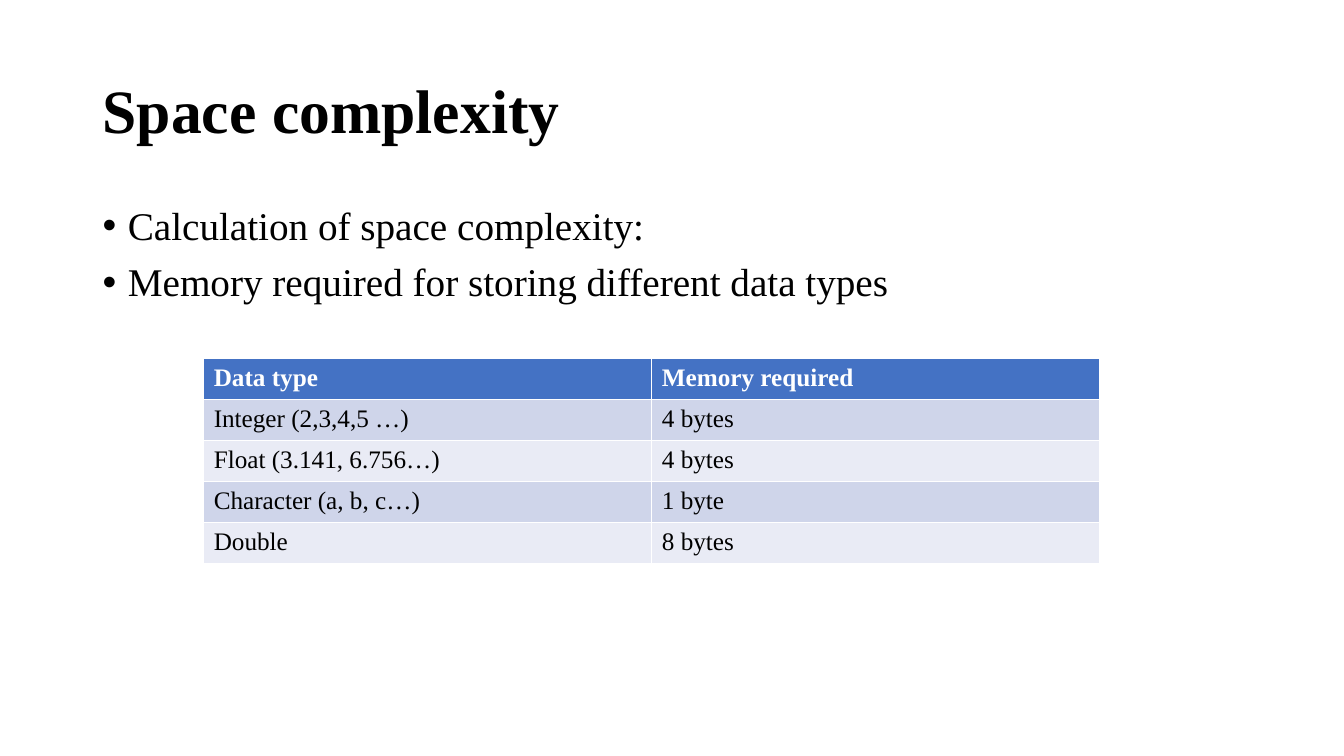
from lxml.etree import SubElement
from pptx import Presentation
from pptx.dml.color import RGBColor
from pptx.enum.text import MSO_ANCHOR
from pptx.oxml.ns import qn
from pptx.util import Inches, Pt

BLACK = RGBColor(0x00, 0x00, 0x00)
WHITE = RGBColor(0xFF, 0xFF, 0xFF)
BLUE = RGBColor(0x44, 0x72, 0xC4)
BANDS = [RGBColor(0xE9, 0xEB, 0xF5), RGBColor(0xCF, 0xD5, 0xEA)]

LEFT, WIDTH = 0.92, 11.5
POINTS = [
    "Calculation of space complexity:",
    "Memory required for storing different data types",
]
TYPES = [
    ("Data type", "Memory required"),
    ("Integer (2,3,4,5 …)", "4 bytes"),
    ("Float (3.141, 6.756…)", "4 bytes"),
    ("Character (a, b, c…)", "1 byte"),
    ("Double", "8 bytes"),
]


class Page:
    face = "Times New Roman"

    def __init__(self, slide):
        self.slide = slide

    def style(self, para, size, color=BLACK, bold=False):
        for run in para.runs:
            font = run.font
            font.name = self.face
            font.size = Pt(size)
            font.bold = bold
            font.color.rgb = color

    def frame(self, top, height):
        """Add a wrapping text box across the content width."""
        box = self.slide.shapes.add_textbox(
            Inches(LEFT), Inches(top), Inches(WIDTH), Inches(height))
        box.text_frame.word_wrap = True
        return box.text_frame

    def title(self, text, top, height):
        frame = self.frame(top, height)
        frame.vertical_anchor = MSO_ANCHOR.MIDDLE
        frame.text = text
        para = frame.paragraphs[0]
        para.line_spacing = 0.9
        self.style(para, 44, bold=True)

    def bullets(self, points, top, height):
        frame = self.frame(top, height)
        frame.text = "\n".join(points)
        for para in frame.paragraphs:
            para.line_spacing = 0.9
            para.space_before = Pt(10)
            self.style(para, 28)
            props = para._p.get_or_add_pPr()
            props.set("marL", str(Inches(0.25)))
            props.set("indent", str(Inches(-0.25)))
            SubElement(props, qn("a:buFont")).set("typeface", "Arial")
            SubElement(props, qn("a:buChar")).set("char", "•")

    def table(self, rows, left, top, width, height):
        """Add a table with a blue header; its style draws the white rules."""
        table = self.slide.shapes.add_table(
            len(rows), len(rows[0]), Inches(left), Inches(top),
            Inches(width), Inches(height)).table
        for r, row in enumerate(rows):
            head = r == 0
            for c, text in enumerate(row):
                cell = table.cell(r, c)
                cell.text = text
                cell.fill.solid()
                cell.fill.fore_color.rgb = BLUE if head else BANDS[r % 2]
                self.style(cell.text_frame.paragraphs[0], 18,
                           WHITE if head else BLACK, head)


def main():
    deck = Presentation()
    deck.slide_width = Inches(13.33)
    deck.slide_height = Inches(7.5)
    page = Page(deck.slides.add_slide(deck.slide_layouts[6]))
    page.title("Space complexity", 0.4, 1.45)
    page.bullets(POINTS, 2, 4.76)
    page.table(TYPES, 2.02, 3.56, 8.89, 2.03)
    deck.save("out.pptx")


if __name__ == "__main__":
    main()
